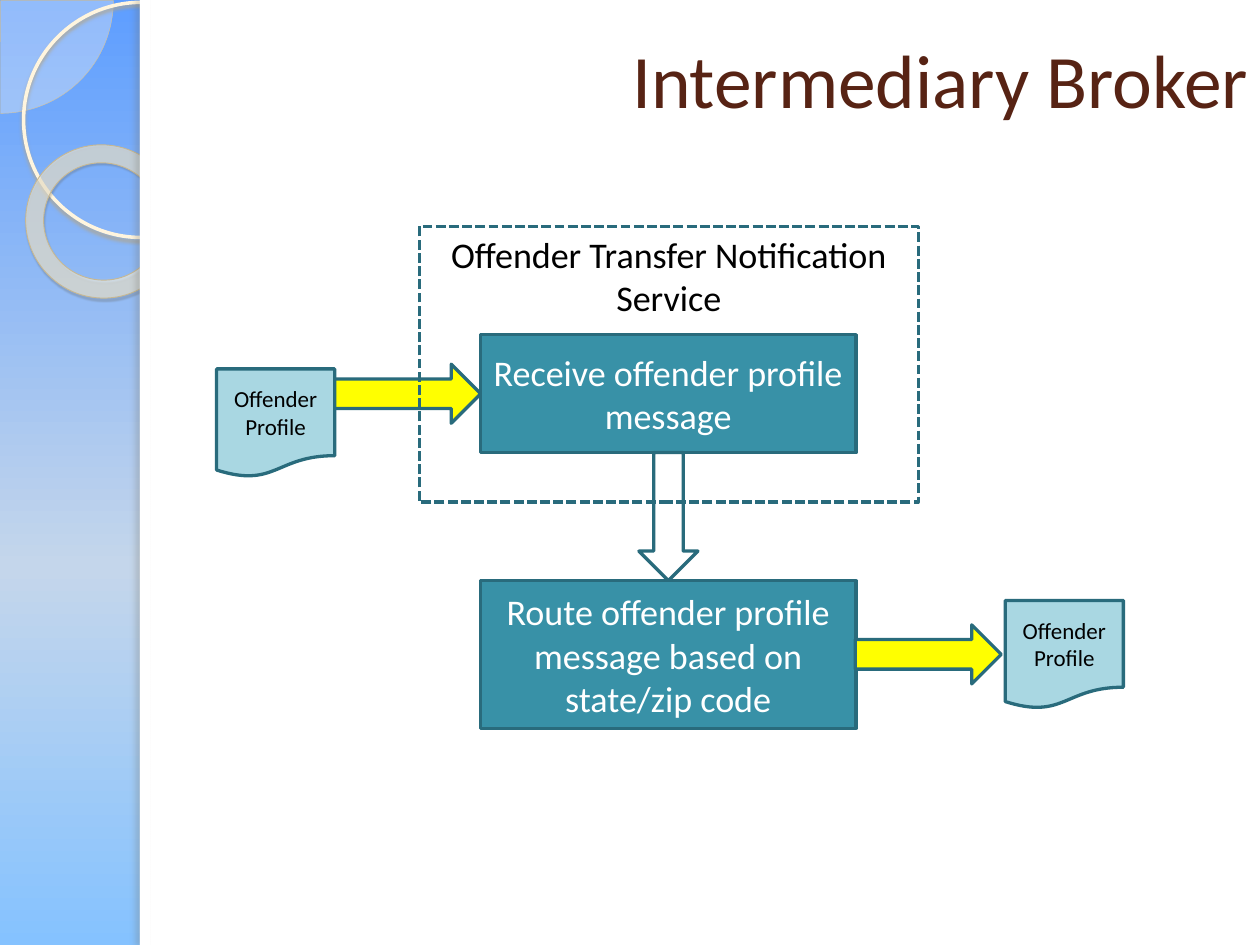
from copy import deepcopy
from lxml.etree import SubElement as Sub
from pptx import Presentation
from pptx.dml.color import RGBColor as Rgb
from pptx.enum.dml import MSO_LINE as Dash
from pptx.enum.shapes import MSO_SHAPE as Kind
from pptx.enum.text import MSO_ANCHOR as Anchor, PP_ALIGN as Align
from pptx.oxml.ns import qn
from pptx.util import Inches, Pt

WHITE = Rgb(0xFF, 0xFF, 0xFF)
BLACK = Rgb(0, 0, 0)
BROWN = Rgb(0x57, 0x23, 0x14)
TEAL = Rgb(0x38, 0x91, 0xA7)
EDGE = Rgb(0x29, 0x6B, 0x7C)
PALE = Rgb(0xA9, 0xD7, 0xE2)
YELLOW = Rgb(0xFF, 0xFF, 0)
CREAM = Rgb(0xFE, 0xFA, 0xF4)
SAND = Rgb(0xF8, 0xEF, 0xD6)
GOLD = Rgb(0xD3, 0xC3, 0x9F)
TAN = Rgb(0xC7, 0xB8, 0x93)
IVORY = Rgb(0xFF, 0xF5, 0xDE)
SKY = ((0, Rgb(0x5E, 0x9E, 0xFF)), (0.6, Rgb(0xC4, 0xD6, 0xEB)),
       (1, Rgb(0x85, 0xC2, 0xFF)))
COLS, ROWS = 32, 24


def write(shape, text, size=22, color=WHITE, align=Align.CENTER, anchor=Anchor.MIDDLE):
    """Put formatted text in a shape."""
    frame = shape.text_frame
    frame.text = text
    frame.word_wrap = True
    frame.vertical_anchor = anchor
    para = frame.paragraphs[0]
    para.alignment = align
    font = para.runs[0].font
    font.name, font.size, font.color.rgb = "Calibri", Pt(size), color


class Deck:
    """Hold the style and the current slide, laid out on a grid."""

    def __init__(self):
        """Start a deck with one title-only slide."""
        self.prs = Presentation()
        self.prs.slide_width, self.prs.slide_height = Inches(10.67), Inches(8)
        self.slide = self.prs.slides.add_slide(self.prs.slide_layouts[5])

    def span(self, *cells):
        """Turn left, top, width and height in cells into lengths."""
        col, row = self.prs.slide_width / COLS, self.prs.slide_height / ROWS
        return [int(n * unit) for n, unit in zip(cells, (col, row, col, row))]

    def sky(self, stops):
        """Fill the background with a downward gradient."""
        fill = self.slide.background.fill
        fill.gradient()
        fill.gradient_angle = 270
        marks = self.slide.element.xpath(".//p:bgPr/a:gradFill/a:gsLst")[0]
        marks.append(deepcopy(marks[0]))
        for stop, (place, color) in zip(fill.gradient_stops, stops):
            stop.position, stop.color.rgb = place, color

    def shape(self, kind, cells, fill=None, line=EDGE, width=2, turn=0, adjust=()):
        """Add a preset shape."""
        item = self.slide.shapes.add_shape(kind, *self.span(*cells))
        item.shadow.inherit = False
        item.rotation = turn
        for n, value in enumerate(adjust):
            item.adjustments[n] = value
        if fill is None:
            item.fill.background()
        else:
            item.fill.solid()
            item.fill.fore_color.rgb = fill
        if line is None:
            item.line.fill.background()
        else:
            item.line.color.rgb, item.line.width = line, Pt(width)
        return item

    def fade(self, item, share):
        """Set the opacity of a solid fill."""
        color = item.element.spPr.xpath("./a:solidFill/*")[0]
        Sub(color, qn("a:alpha"), val=str(share * 1000))

    def shade(self, item, color, share, blur, dist, angle):
        """Cast an outer shadow."""
        glow = Sub(item.element.spPr.find(qn("a:effectLst")), qn("a:outerShdw"),
                   blurRad=str(Pt(blur)), dist=str(Pt(dist)),
                   dir=str(angle * 60000), algn="tl", rotWithShape="0")
        tint = Sub(glow, qn("a:srgbClr"), val=color)
        Sub(tint, qn("a:alpha"), val=str(share * 1000))

    def decor(self):
        """Draw the side band and the white page."""
        self.sky(SKY)
        pie = self.shape(Kind.PIE, (-2.85, -2.85, 5.73, 5.73), CREAM, GOLD, 0.25,
                         adjust=(0, 54.02))
        self.fade(pie, 33)
        ring = self.shape(Kind.OVAL, (0.6, 0.06, 5.97, 5.97), None, IVORY, 2.15)
        self.shade(ring, "B0A68F", 85, 2, 2, 90)
        donut = self.shape(Kind.DONUT, (0.64, 3.69, 3.93, 3.87), SAND, TAN, 0.58,
                           38.6, (0.118,))
        self.fade(donut, 60)
        self.shade(donut, "5A5444", 35, 1, 1.2, 75)
        self.shape(Kind.RECTANGLE, (3.55, 0, COLS - 3.55, ROWS), WHITE, None)
        strip = self.shape(Kind.RECTANGLE, (3.55, 0, 0.27, ROWS), WHITE, None)
        self.shade(strip, "736F63", 25, 3, 3, 180)

    def title(self, text):
        """Place the title above the page."""
        item = self.slide.shapes.title
        item.left, item.top, item.width, item.height = self.span(6.48, 0, 25.52, 4)
        write(item, text, 46, BROWN, Align.RIGHT)
        self.slide.shapes.element.append(item.element)

    def step(self, text, top, tall):
        """Add a process box."""
        write(self.shape(Kind.FLOWCHART_PROCESS, (12.2, top, 9.54, tall), TEAL), text)

    def arrow(self, left, top, wide, fill=YELLOW, turn=0):
        """Add a block arrow."""
        self.shape(Kind.RIGHT_ARROW, (left, top, wide, 1.5), fill, turn=turn)

    def scope(self, text, cells):
        """Add a dashed frame with a heading."""
        item = self.shape(Kind.RECTANGLE, cells)
        item.line.dash_style = Dash.SQUARE_DOT
        write(item, text, color=BLACK, anchor=Anchor.TOP)

    def note(self, text, left, top):
        """Add a document."""
        item = self.shape(Kind.FLOWCHART_DOCUMENT, (left, top, 3, 2.75), PALE)
        write(item, text, 14, BLACK)


def main():
    """Build the slide."""
    deck = Deck()
    deck.decor()
    deck.title("Intermediary Broker")
    deck.step("Receive offender profile message", 8.5, 3)
    deck.arrow(6.33, 9.25, 5.88)
    deck.step("Route offender profile message based on state/zip code", 14.75, 3.75)
    deck.arrow(15.35, 12.37, 3.25, None, 90)
    deck.arrow(21.72, 15.87, 3.71)
    deck.scope("Offender Transfer Notification Service", (10.65, 5.75, 12.67, 7))
    for left, top in ((5.5, 9.37), (25.53, 15.25)):
        deck.note("Offender Profile", left, top)
    deck.prs.save("out.pptx")


if __name__ == "__main__":
    main()
